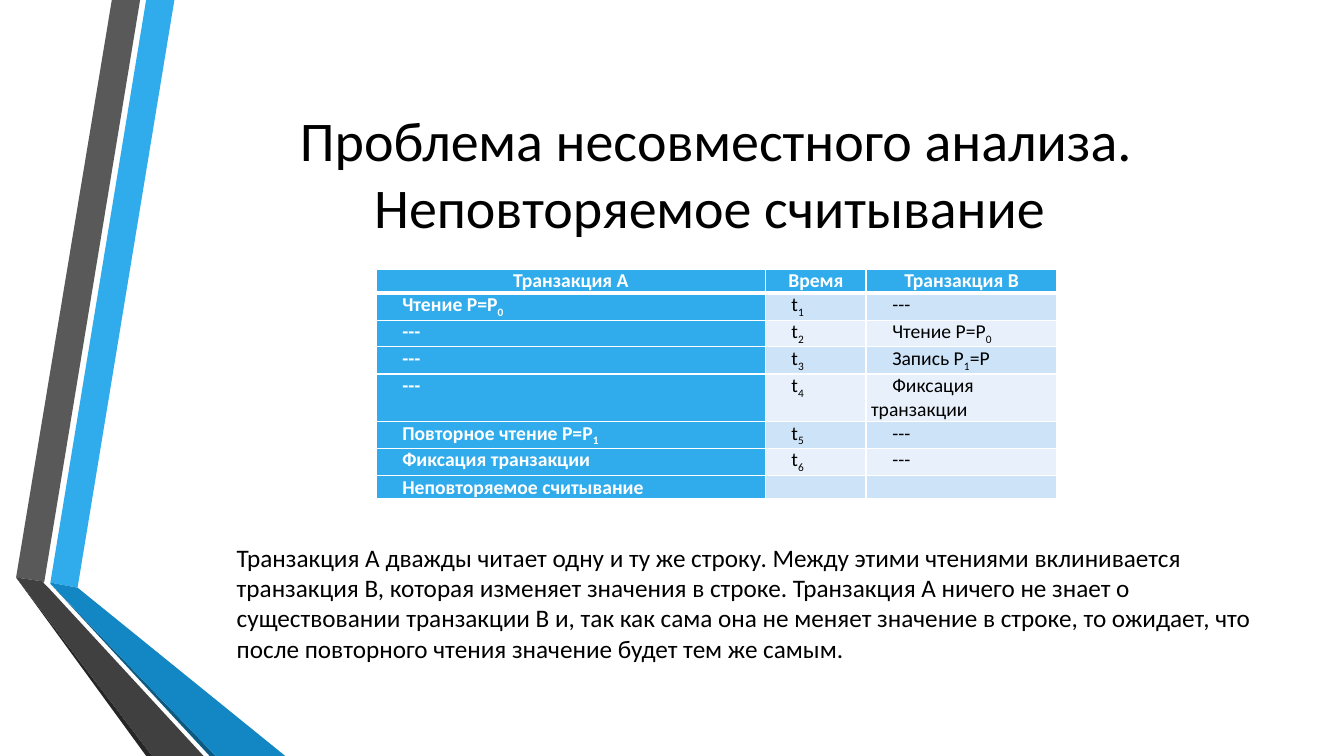
from dataclasses import dataclass

from lxml import etree
from pptx import Presentation
from pptx import util as u
from pptx.dml.color import RGBColor
from pptx.enum import text
from pptx.oxml import ns

PX = 9144
FONT = "Calibri"
WHITE = RGBColor(0xFF, 0xFF, 0xFF)
BLACK = RGBColor(0x00, 0x00, 0x00)
BLUE = RGBColor(0x30, 0xAC, 0xEC)
DEEP_BLUE = RGBColor(0x12, 0x87, 0xC3)
NAVY = RGBColor(0x0C, 0x5A, 0x82)
GREY = RGBColor(0x59, 0x59, 0x59)
DARK_GREY = RGBColor(0x40, 0x40, 0x40)
CHARCOAL = RGBColor(0x26, 0x26, 0x26)
ODD_ROW = RGBColor(0xCD, 0xE3, 0xF8)
EVEN_ROW = RGBColor(0xE8, 0xF1, 0xFB)


@dataclass(frozen=True)
class Ribbon:
    """A filled polygon of the side decoration, in px."""

    color: RGBColor
    points: tuple[tuple[int, int], ...]


@dataclass(frozen=True)
class Box:
    """A place on the slide, in px."""

    left: int
    top: int
    width: int
    height: int

    def emu(self) -> tuple[int, int, int, int]:
        """Return the place in EMU."""
        return self.left * PX, self.top * PX, self.width * PX, self.height * PX


RIBBONS = (
    Ribbon(BLUE, ((50, 578), (77, 583), (173, 0), (145, 0))),
    Ribbon(GREY, ((139, 0), (111, 0), (16, 573), (44, 577))),
    Ribbon(CHARCOAL, ((16, 573), (145, 750), (151, 750))),
    Ribbon(NAVY, ((50, 579), (208, 750), (214, 750))),
    Ribbon(DEEP_BLUE, ((50, 579), (214, 750), (283, 750), (77, 583), (50, 578))),
    Ribbon(DARK_GREY, ((202, 750), (48, 583), (43, 578), (44, 577), (16, 573), (151, 750))),
)

TITLE = "Проблема несовместного анализа. Неповторяемое считывание "
SUMMARY = (
    "Транзакция A дважды читает одну и ту же строку. Между этими чтениями "
    "вклинивается транзакция B, которая изменяет значения в строке. "
    "Транзакция A ничего не знает о существовании транзакции B и, так как "
    "сама она не меняет значение в строке, то ожидает, что после повторного "
    "чтения значение будет тем же самым."
)
TABLE_BOX = Box(373, 267, 675, 226)
COLUMN_WIDTHS = (386, 100, 189)
ROW_HEIGHTS = (24, 26, 26, 27, 47, 26, 27, 23)
ROWS = (
    ("Транзакция A ", "Время ", "Транзакция B "),
    ("Чтение P=P_0", "t_1", "--- "),
    ("--- ", "t_2", "Чтение P=P_0"),
    ("--- ", "t_3", "Запись P_1=P"),
    ("--- ", "t_4", "Фиксация транзакции "),
    ("Повторное чтение P=P_1", "t_5", "--- "),
    ("Фиксация транзакции ", "t_6", "--- "),
    ("Неповторяемое считывание ", "", ""),
)


def write(para, content: str, *, size: int, color: RGBColor = BLACK,
          bold: bool = False, align=text.PP_ALIGN.LEFT) -> None:
    """Write content, lowering each character that follows an underscore."""
    para.alignment = align
    first, *rest = content.split("_")
    spans = [(first, False)]
    for part in rest:
        spans += [(part[0], True), (part[1:], False)]
    for words, lowered in spans:
        if not words:
            continue
        span = para.add_run()
        span.text = words
        span.font.name = FONT
        span.font.size = u.Pt(size)
        span.font.bold = bold
        span.font.color.rgb = color
        if lowered:
            span.font._element.set("baseline", "-25000")
    para._p.get_or_add_endParaRPr().set("sz", str(size * 100))


def add_text(page, place: Box, content: str, *, anchor=text.MSO_ANCHOR.TOP, **style) -> None:
    """Add a wrapped text box."""
    frame = page.shapes.add_textbox(*place.emu()).text_frame
    frame.word_wrap = True
    frame.vertical_anchor = anchor
    write(frame.paragraphs[0], content, **style)


def add_ribbon(page, ribbon: Ribbon) -> None:
    """Draw one polygon without an outline."""
    start, *others = ribbon.points
    builder = page.shapes.build_freeform(*start, scale=PX)
    builder.add_line_segments(others, close=True)
    shape = builder.convert_to_shape()
    shape.shadow.inherit = False
    shape.fill.solid()
    shape.fill.fore_color.rgb = ribbon.color
    shape.line.fill.background()


def add_border(cell, side: str, points: int) -> None:
    """Add a white border to one side of a cell."""
    line = etree.SubElement(cell._tc.get_or_add_tcPr(), ns.qn(f"a:ln{side}"),
                            w=str(u.Pt(points)))
    fill = etree.SubElement(line, ns.qn("a:solidFill"))
    etree.SubElement(fill, ns.qn("a:srgbClr"), val=str(WHITE))


def format_cell(cell, row: int, column: int) -> None:
    """Fill a cell with its text, borders and colour."""
    header = row == 0
    accent = header or column == 0
    cell.margin_left = cell.margin_right = cell.margin_top = cell.margin_bottom = 0
    para = cell.text_frame.paragraphs[0]
    write(para, ROWS[row][column], size=14, bold=accent,
          color=WHITE if accent else BLACK,
          align=text.PP_ALIGN.CENTER if header else text.PP_ALIGN.JUSTIFY)
    para.space_before, para.space_after = u.Pt(3), u.Pt(8.2)
    properties = para._p.get_or_add_pPr()
    properties.set("marL", str(5 * PX))
    properties.set("indent", str(0 if header else 21 * PX))
    for side in "LRTB":
        thick = (row, side) in ((0, "B"), (1, "T"))
        add_border(cell, side, 3 if thick else 1)
    cell.fill.solid()
    cell.fill.fore_color.rgb = BLUE if accent else ODD_ROW if row % 2 else EVEN_ROW


def add_schedule(page) -> None:
    """Add the table of the two transactions."""
    table = page.shapes.add_table(len(ROWS), len(COLUMN_WIDTHS), *TABLE_BOX.emu()).table
    table.first_col = True
    for column, width in zip(table.columns, COLUMN_WIDTHS):
        column.width = width * PX
    for row, height in enumerate(ROW_HEIGHTS):
        table.rows[row].height = height * PX
        for column in range(len(COLUMN_WIDTHS)):
            format_cell(table.cell(row, column), row, column)


def main() -> None:
    """Build and save the slide."""
    deck = Presentation()
    deck.slide_width, deck.slide_height = 1333 * PX, 750 * PX
    page = deck.slides.add_slide(deck.slide_layouts[6])
    for ribbon in RIBBONS:
        add_ribbon(page, ribbon)
    add_text(page, Box(162, 75, 1096, 192), TITLE, size=40,
             anchor=text.MSO_ANCHOR.MIDDLE, align=text.PP_ALIGN.CENTER)
    add_schedule(page)
    add_text(page, Box(225, 533, 1033, 131), SUMMARY, size=18)
    deck.save("out.pptx")


if __name__ == "__main__":
    main()
